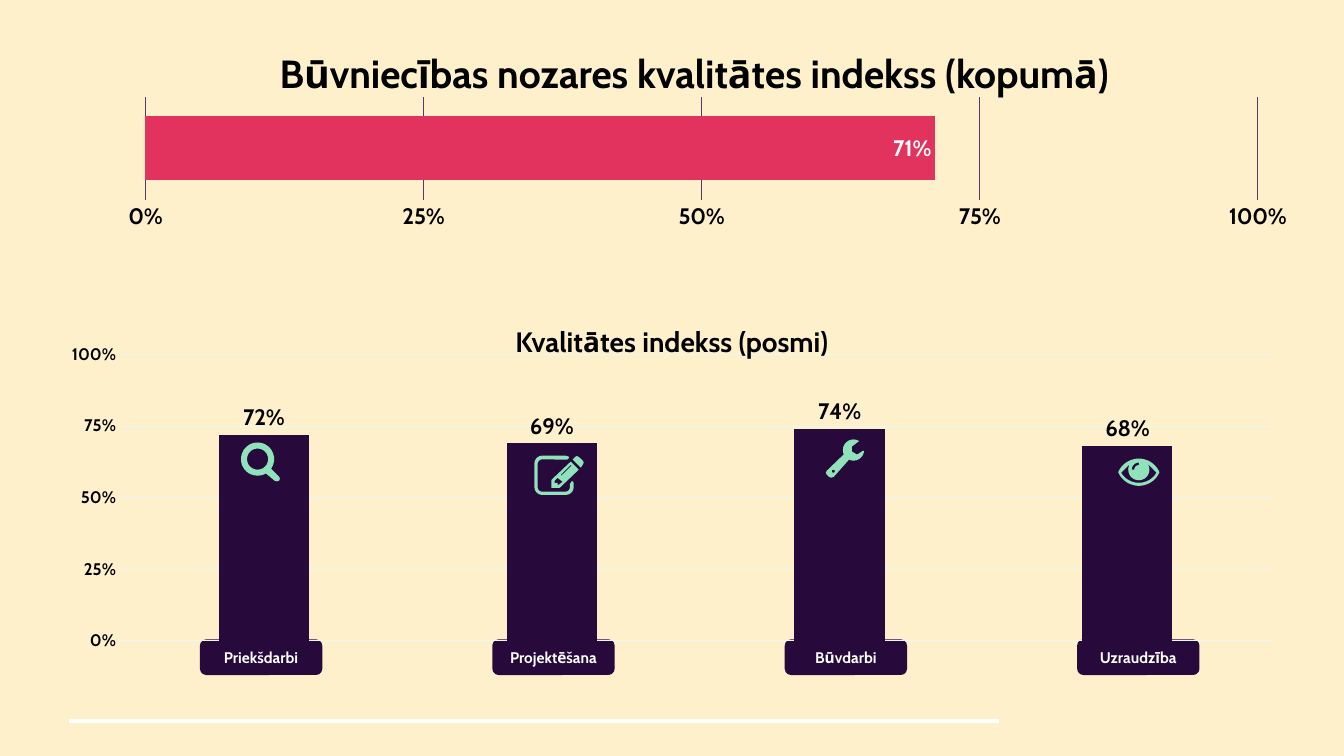
import math

from lxml import etree
from pptx import Presentation
from pptx import util as u
from pptx.chart import data as chart_data
from pptx.dml import color
from pptx.enum import chart as charts, shapes, text
from pptx.oxml import ns, parse_xml

FONT = "Cabin"
COLORS = {
    "background": "FFF0CC", "ink": "000000", "white": "FFFFFF",
    "plum": "27093C", "plum_grid": "56386A", "mint": "90E2BB",
    "mint_grid": "E9F9F1", "crimson": "E1335E",
}
STAGES = [("Priekšdarbi", 0.72), ("Projektēšana", 0.69),
          ("Būvdarbi", 0.74), ("Uzraudzība", 0.68)]


def rgb(name):
    return color.RGBColor.from_string(COLORS[name])


def style_font(font, size, ink="ink"):
    font.name, font.size, font.bold = FONT, u.Pt(size), True
    font.color.rgb = rgb(ink)


def add_label(slide, box, words, size, ink="ink", fill=None):
    """Rounded box with one centred line of text; plain unless filled."""
    label = slide.shapes.add_shape(
        shapes.MSO_SHAPE.ROUNDED_RECTANGLE, *map(u.Inches, box))
    label.shadow.inherit = False
    frame = label.text_frame
    frame.word_wrap = True
    if fill:
        label.fill.solid()
        label.fill.fore_color.rgb = rgb(fill)
        label.line.color.rgb = rgb(fill)
        label.line.width = u.Pt(1)
        frame.vertical_anchor = text.MSO_ANCHOR.MIDDLE
        frame.margin_left = frame.margin_right = 0
    else:
        label.fill.background()
        label.line.fill.background()
        frame.vertical_anchor = text.MSO_ANCHOR.TOP
    paragraph = frame.paragraphs[0]
    paragraph.alignment = text.PP_ALIGN.CENTER
    run = paragraph.add_run()
    run.text = words
    style_font(run.font, size, ink)


def place_plot(chart, layout):
    """Fix the inner plot area, as shares of the chart, on a clear ground."""
    parts = "".join(f'<c:{tag} val="{share}"/>' for tag, share in zip("xywh", layout))
    plot_layout = parse_xml(
        f'<c:layout {ns.nsdecls("c")}><c:manualLayout><c:layoutTarget val="inner"/>'
        f'<c:xMode val="edge"/><c:yMode val="edge"/>{parts}</c:manualLayout></c:layout>')
    space = chart._chartSpace
    plot_area = space.find(ns.qn("c:chart")).find(ns.qn("c:plotArea"))
    for old_layout in plot_area.findall(ns.qn("c:layout")):
        plot_area.remove(old_layout)
    plot_area.insert(0, plot_layout)
    space.find(ns.qn("c:chart")).addnext(parse_xml(
        f'<c:spPr {ns.nsdecls("c", "a")}><a:noFill/><a:ln><a:noFill/></a:ln></c:spPr>'))


def add_index_chart(slide, box, kind, values, layout, gap, bar, grid,
                    axis_size, label_ink, label_spot):
    index_data = chart_data.CategoryChartData(number_format="0%")
    index_data.categories = [str(n + 1) for n in range(len(values))]
    index_data.add_series("Series 1", values)
    chart = slide.shapes.add_chart(kind, *map(u.Inches, box), index_data).chart
    chart.has_legend = chart.has_title = False
    style_font(chart.font, 10)
    place_plot(chart, layout)
    chart.category_axis.visible = False

    axis = chart.value_axis
    axis.minimum_scale, axis.maximum_scale, axis.major_unit = 0, 1, 0.25
    axis.major_tick_mark = axis.minor_tick_mark = charts.XL_TICK_MARK.NONE
    axis.format.line.fill.background()
    axis.major_gridlines.format.line.color.rgb = rgb(grid)
    axis.major_gridlines.format.line.width = u.Pt(0.75)
    axis.tick_labels.number_format = "0%"
    axis.tick_labels.number_format_is_linked = False
    style_font(axis.tick_labels.font, axis_size)

    plot = chart.plots[0]
    plot.gap_width = gap
    plot.vary_by_categories = False
    series = plot.series[0]
    series.format.fill.solid()
    series.format.fill.fore_color.rgb = rgb(bar)
    labels = series.data_labels
    labels.show_value = True
    labels.number_format = "0%"
    labels.number_format_is_linked = False
    labels.position = label_spot
    style_font(labels.font, 16, label_ink)
    return plot


# Icon outlines, in thousandths of an inch from the icon's top left corner

def arc(cx, cy, radius, start, end, steps=24):
    angles = (math.radians(start + (end - start) * i / steps) for i in range(steps + 1))
    return [(cx + radius * math.cos(a), cy + radius * math.sin(a)) for a in angles]


def magnifier():
    handle = [(380, 340), (386, 360), (380, 378), (360, 386), (335, 380)]
    return [arc(165, 165, 165, 60, 395) + handle, arc(165, 165, 105, 0, 360)]


def pencil():
    sheet = (arc(80, 80, 80, 180, 270, 8)
             + [(310, 0), (340, 10), (345, 20), (330, 38), (310, 40)]
             + arc(80, 85, 48, 270, 180, 8) + arc(80, 310, 48, 180, 90, 8)
             + arc(305, 310, 48, 90, 0, 8)
             + [(353, 280), (372, 252), (388, 262)]
             + arc(310, 310, 80, 0, 90, 8) + arc(80, 310, 80, 90, 180, 8))
    body = [(360, 60), (440, 140), (250, 320), (170, 320), (170, 240)]
    tip = [(230, 220), (200, 250), (200, 270), (230, 270), (230, 290), (240, 290), (280, 260)]
    shine = [(360, 92), (260, 192), (266, 200), (368, 100)]
    cap = [(405, 12), (420, 5), (440, 12), (480, 50), (490, 70), (480, 90), (460, 120), (380, 40)]
    return [sheet, body, tip, shine, cap]


def wrench():
    handle = [(80, 370), (55, 380), (30, 370), (10, 350), (0, 330), (10, 310)]
    jaw = [(260, 70), (260, 120), (310, 150), (370, 112)]
    return [arc(275, 105, 105, 5, 115) + handle + arc(275, 105, 105, 156, 302) + jaw,
            arc(75, 315, 15, 0, 360)]


def eye():
    rim = arc(205, 222, 222, 202.5, 337.5) + arc(205, 48, 222, 22.5, 157.5)
    white = arc(205, 37, 203, 149.5, 30.5) + arc(205, 110, 105, -35, 215)
    shine = arc(205, 110, 70, 180, 270) + arc(205, 110, 45, 270, 180)
    return [rim, white, shine]


def add_icon(slide, left, top, contours):
    builder = slide.shapes.build_freeform(*contours[0][0], scale=u.Inches(1) / 1000)
    for i, contour in enumerate(contours):
        if i:
            builder.move_to(*contour[0])
        builder.add_line_segments(contour[1:], close=True)
    icon = builder.convert_to_shape(u.Inches(left), u.Inches(top))
    icon.shadow.inherit = False
    icon.fill.solid()
    icon.fill.fore_color.rgb = rgb("mint")
    icon.line.fill.background()


def add_footer_rule(slide, left, right, y):
    rule = slide.shapes.add_connector(
        shapes.MSO_CONNECTOR.STRAIGHT, *map(u.Inches, (right, y, left, y)))
    rule.line.color.rgb = rgb("white")
    rule.line.width = u.Pt(3)
    etree.SubElement(rule._element.spPr, ns.qn("a:effectLst"))


def add_overall(slide, left, top, width, height):
    add_index_chart(slide, (left, top, width, height), charts.XL_CHART_TYPE.BAR_CLUSTERED,
                    [0.71], (0.0345, 0.023, 0.9216, 0.74), 60, "crimson", "plum_grid",
                    16, "white", charts.XL_LABEL_POSITION.INSIDE_END)


def add_stages(slide, left, top, width, height):
    # Stage names stand behind the columns
    for i, (stage, _) in enumerate(STAGES):
        add_label(slide, (left + 1.52 + 2.9 * i, top + 3, 1.2, 0.34),
                  stage, 11, "white", "plum")
    plot = add_index_chart(
        slide, (left, top, width, height), charts.XL_CHART_TYPE.COLUMN_CLUSTERED,
        [share for _, share in STAGES], (0.058, 0.0526, 0.921, 0.8966), 219,
        "plum", "mint_grid", 12, "ink", charts.XL_LABEL_POSITION.OUTSIDE_END)
    plot.overlap = -27
    add_label(slide, (left + 3.78, top - 0.2, 4.83, 0.43), "Kvalitātes indekss (posmi)", 20)
    for dx, dy, contours in [(1.92, 1.04, magnifier()), (4.83, 1.17, pencil()),
                             (7.72, 1.01, wrench()), (10.62, 1.2, eye())]:
        add_icon(slide, left + dx, top + dy, contours)


def main():
    deck = Presentation()
    deck.slide_width, deck.slide_height = u.Inches(13.33), u.Inches(7.5)
    slide = deck.slides.add_slide(deck.slide_layouts[6])
    slide.background.fill.solid()
    slide.background.fill.fore_color.rgb = rgb("background")

    add_footer_rule(slide, 0.68, 9.91, 7.15)
    add_label(slide, (0.9, 0.18, 11.97, 5.26),
              "Būvniecības nozares kvalitātes indekss (kopumā)", 28)
    add_stages(slide, 0.47, 3.35, 12.4, 3.17)
    add_overall(slide, 1.03, 0.93, 11.97, 1.38)
    deck.save("out.pptx")


if __name__ == "__main__":
    main()
